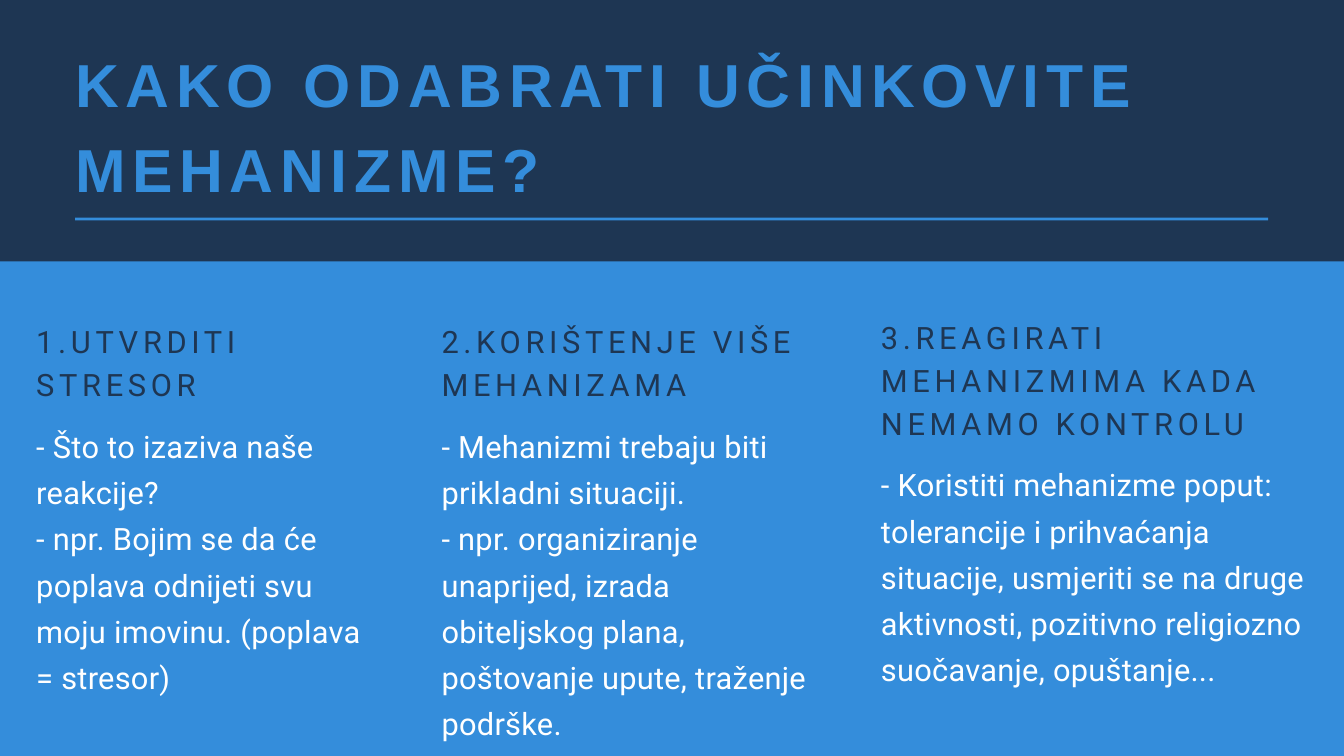
import pptx
import pptx.dml.color
import pptx.enum.shapes
import pptx.enum.text
import pptx.oxml.ns
import pptx.util
from lxml import etree

Cm = pptx.util.Cm
Pt = pptx.util.Pt
NAVY = pptx.dml.color.RGBColor(0x1E, 0x36, 0x53)
BLUE = pptx.dml.color.RGBColor(0x34, 0x8D, 0xDB)
WHITE = pptx.dml.color.RGBColor(0xFF, 0xFF, 0xFF)


def add_bar(s, left, top, width, height, color):
    sp = s.shapes.add_shape(pptx.enum.shapes.MSO_SHAPE.RECTANGLE,
                            Cm(left), Cm(top), Cm(width), Cm(height))
    sp.shadow.inherit = False
    sp.fill.solid()
    sp.fill.fore_color.rgb = color
    sp.line.fill.background()
    return sp


def set_text(sp, box, lines, font, size, color, leading, spacing, bold=False):
    sp.left, sp.top, sp.width, sp.height = [Cm(v) for v in box]
    tf = sp.text_frame
    tf.margin_left = tf.margin_top = tf.margin_right = tf.margin_bottom = 0
    tf.word_wrap = True
    tf.auto_size = pptx.enum.text.MSO_AUTO_SIZE.SHAPE_TO_FIT_TEXT
    tf.vertical_anchor = pptx.enum.text.MSO_ANCHOR.TOP
    for i, line in enumerate(lines):
        p = tf.add_paragraph() if i else tf.paragraphs[0]
        p.alignment = pptx.enum.text.PP_ALIGN.LEFT
        p.line_spacing = Pt(leading)
        p.space_before = p.space_after = Pt(0)
        pPr = p._p.get_or_add_pPr()
        pPr.set("marL", "0")
        pPr.set("indent", "0")
        etree.SubElement(pPr, pptx.oxml.ns.qn("a:buNone"))
        r = p.add_run()
        r.text = line
        r.font.name = font
        r.font.size = Pt(size)
        r.font.bold = bold
        r.font.color.rgb = color
        r._r.get_or_add_rPr().set("spc", str(round(spacing * 100)))


prs = pptx.Presentation()
prs.slide_width = Cm(50.8)
prs.slide_height = Cm(28.58)
s = prs.slides.add_slide(prs.slide_layouts.get_by_name("Comparison"))
s.background.fill.solid()
s.background.fill.fore_color.rgb = BLUE

title = s.shapes.title
band = add_bar(s, 0, 0, 50.8, 9.88, NAVY)
title.element.addprevious(band.element)
set_text(title, (2.84, 1.3, 44.93, 6.27), ["KAKO ODABRATI UČINKOVITE MEHANIZME?"],
         "Arial", 65, BLUE, 91, 7.2, bold=True)
add_bar(s, 2.84, 8.23, 45.09, 0.1, BLUE)

columns = [
    (1.37, 12.73, 11.96, 3.12, 15.82, 10.16, "1.UTVRDITI STRESOR",
     ["- Što to izaziva naše reakcije?",
      "- npr. Bojim se da će poplava odnijeti svu moju imovinu. (poplava = stresor)"]),
    (16.69, 14.73, 11.96, 3.12, 15.82, 10.16, "2.KORIŠTENJE VIŠE MEHANIZAMA",
     ["- Mehanizmi trebaju biti prikladni situaciji.",
      "- npr. organiziranje unaprijed, izrada obiteljskog plana, "
      "poštovanje upute, traženje podrške."]),
    (33.3, 16.03, 11.81, 4.75, 17.27, 8.46, "3.REAGIRATI MEHANIZMIMA KADA NEMAMO KONTROLU",
     ["- Koristiti mehanizme poput: tolerancije i prihvaćanja situacije, usmjeriti se na "
      "druge aktivnosti, pozitivno religiozno suočavanje, opuštanje..."]),
]
frames = [s.placeholders[i] for i in (1, 2, 3, 4)]
frames += [s.shapes.add_textbox(0, 0, Cm(1), Cm(1)) for _ in range(2)]

for i, (left, width, head_top, head_height, top, height, heading, lines) in enumerate(columns):
    set_text(frames[2 * i], (left, head_top, width, head_height), [heading],
             "Roboto", 33, NAVY, 46.2, 5)
    set_text(frames[2 * i + 1], (left, top, width, height), lines,
             "Roboto", 33, WHITE, 49.5, 0.3)

prs.save("out.pptx")
